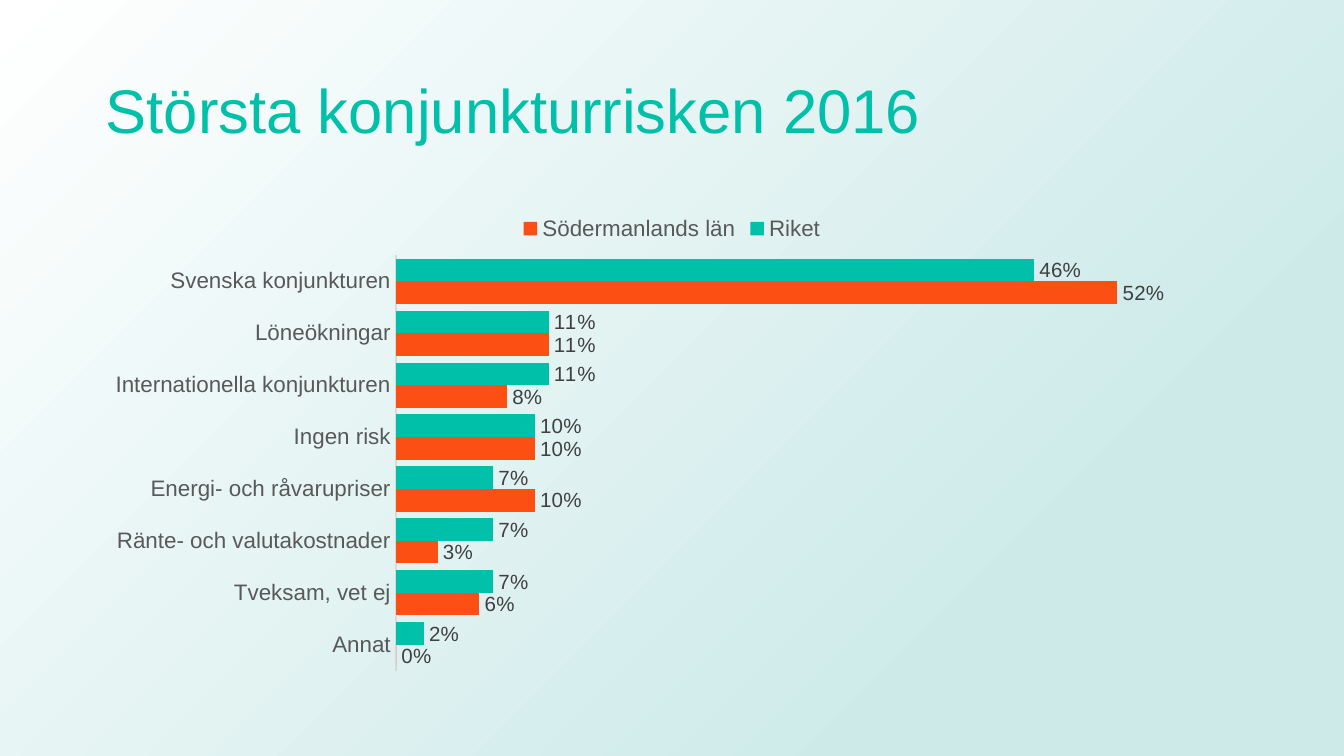
import pptx
import pptx.chart.data
import pptx.enum.chart
import pptx.enum.shapes
import pptx.enum.text
import pptx.oxml
import pptx.oxml.ns
import pptx.util
from pptx.dml.color import RGBColor

Pt = pptx.util.Pt
WIDTH, HEIGHT = 720, 405
MARGIN = 49.5
COLORS = {
    "teal": "00C0A9",
    "orange": "FB4F14",
    "mist": "CDEAE9",
    "white": "FFFFFF",
    "label": "404040",
    "axis text": "595959",
    "axis line": "D9D9D9",
}
CATEGORIES = [
    "Svenska konjunkturen", "Löneökningar", "Internationella konjunkturen",
    "Ingen risk", "Energi- och råvarupriser", "Ränte- och valutakostnader",
    "Tveksam, vet ej", "Annat",
]
SERIES = [
    ("Riket", "teal", [0.46, 0.11, 0.11, 0.10, 0.07, 0.07, 0.07, 0.02]),
    ("Södermanlands län", "orange", [0.52, 0.11, 0.08, 0.10, 0.10, 0.03, 0.06, 0]),
]


class SlideBuilder:
    font_name = "Arial"

    def __init__(self, page):
        self.page = page

    def color(self, name):
        return RGBColor.from_string(COLORS[name])

    def style(self, font, size, color):
        font.name = self.font_name
        font.size = Pt(size)
        font.color.rgb = self.color(color)

    def backdrop(self, inner, outer):
        """Cover the page with a gradient that spreads from the bottom right corner."""
        box = self.page.shapes.add_shape(
            pptx.enum.shapes.MSO_SHAPE.RECTANGLE, 0, 0, Pt(WIDTH), Pt(HEIGHT))
        box.shadow.inherit = False
        box.line.fill.background()
        box.fill.gradient()
        for stop, position, name in zip(box.fill.gradient_stops, (0.23, 1), (inner, outer)):
            stop.position = position
            stop.color.rgb = self.color(name)
        gradient = box.element.spPr.find(pptx.oxml.ns.qn("a:gradFill"))
        linear = gradient.find(pptx.oxml.ns.qn("a:lin"))
        gradient.replace(linear, pptx.oxml.parse_xml(
            f'<a:path {pptx.oxml.ns.nsdecls("a")} path="circle">'
            '<a:fillToRect l="100000" t="100000"/></a:path>'))
        self.page.shapes.element.insert(2, box.element)

    def title(self, text, left, top, width, height):
        box = self.page.shapes.title
        box.left, box.top, box.width, box.height = map(Pt, (left, top, width, height))
        frame = box.text_frame
        frame.text = text
        frame.word_wrap = True
        frame.auto_size = pptx.enum.text.MSO_AUTO_SIZE.NONE
        frame.vertical_anchor = pptx.enum.text.MSO_ANCHOR.MIDDLE
        para = frame.paragraphs[0]
        para.alignment = pptx.enum.text.PP_ALIGN.LEFT
        para.line_spacing = 0.9
        self.style(para.font, 33, "teal")

    def bar_chart(self, categories, series, left, top, width, height):
        data = pptx.chart.data.CategoryChartData(number_format="0%")
        data.categories = categories
        for name, _, values in series:
            data.add_series(name, values)
        chart = self.page.shapes.add_chart(
            pptx.enum.chart.XL_CHART_TYPE.BAR_CLUSTERED,
            *map(Pt, (left, top, width, height)), data).chart
        self.style(chart.font, 12, "axis text")
        chart.has_title = False
        chart.has_legend = True
        chart.legend.position = pptx.enum.chart.XL_LEGEND_POSITION.TOP
        chart.legend.include_in_layout = False
        self.style(chart.legend.font, 12, "axis text")

        axis = chart.category_axis
        axis.reverse_order = True
        axis.major_tick_mark = pptx.enum.chart.XL_TICK_MARK.NONE
        axis.format.line.color.rgb = self.color("axis line")
        axis.format.line.width = Pt(0.75)
        self.style(axis.tick_labels.font, 12, "axis text")
        scale = chart.value_axis
        scale.visible = False
        scale.has_major_gridlines = False
        scale.minimum_scale, scale.maximum_scale = 0, 0.6

        plot = chart.plots[0]
        plot.gap_width = 30
        plot.overlap = 0
        plot.vary_by_categories = False
        for bars, (_, color, _) in zip(plot.series, series):
            bars.format.fill.solid()
            bars.format.fill.fore_color.rgb = self.color(color)
            labels = bars.data_labels
            labels.show_value = True
            labels.number_format = "0%"
            labels.number_format_is_linked = False
            labels.position = pptx.enum.chart.XL_LABEL_POSITION.OUTSIDE_END
            self.style(labels.font, 11, "label")


def main():
    deck = pptx.Presentation()
    deck.slide_width, deck.slide_height = Pt(WIDTH), Pt(HEIGHT)
    title_only = deck.slide_layouts[5]
    builder = SlideBuilder(deck.slides.add_slide(title_only))
    content_width = WIDTH - 2 * MARGIN
    builder.backdrop("mist", "white")
    builder.title("Största konjunkturrisken 2016", MARGIN, 21.5, content_width, 78.5)
    builder.bar_chart(CATEGORIES, SERIES, MARGIN, 108, content_width, 256.5)
    deck.save("out.pptx")


if __name__ == "__main__":
    main()
